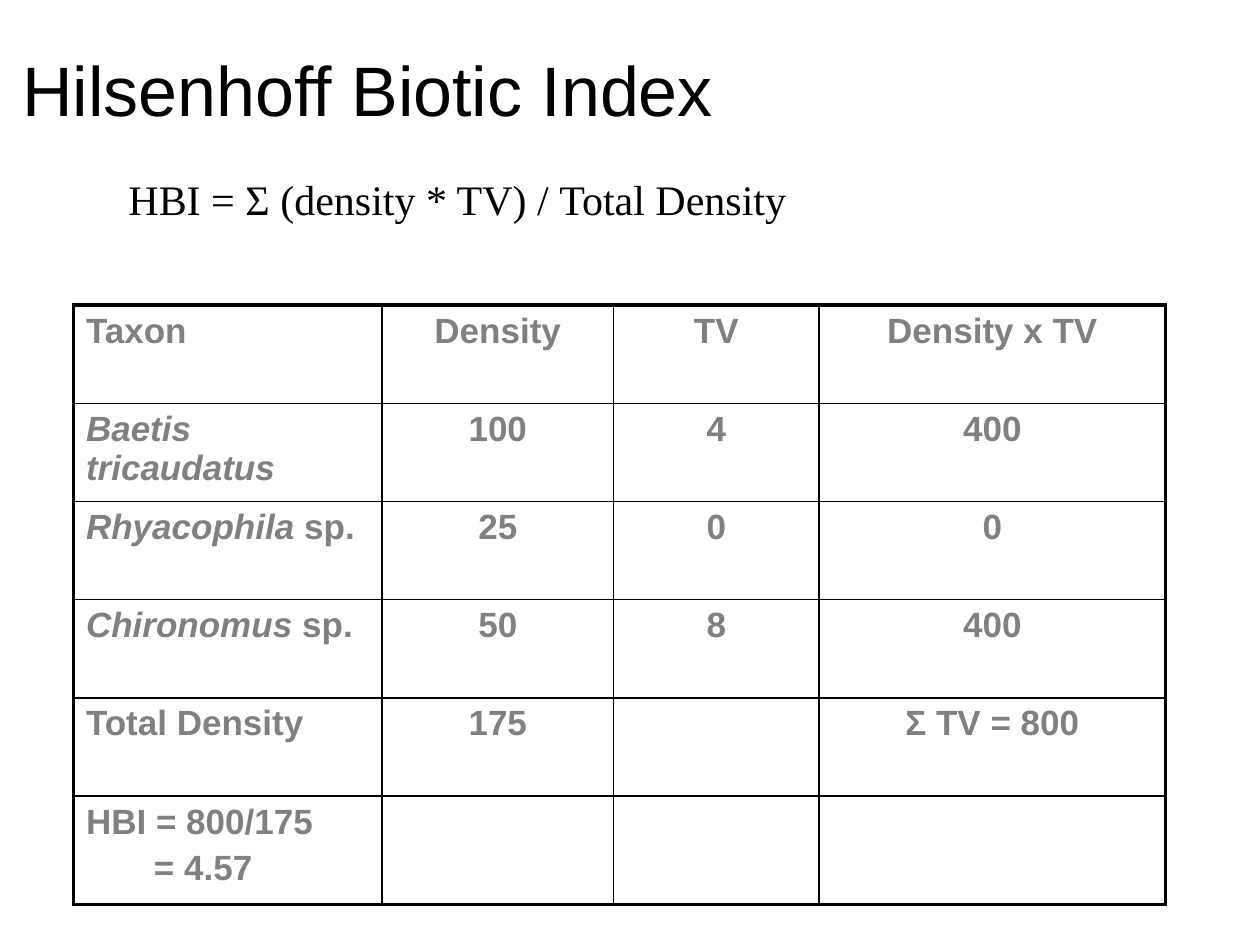
from lxml import etree
from pptx import Presentation
from pptx.dml.color import RGBColor
from pptx.enum.text import MSO_ANCHOR, PP_ALIGN
from pptx.oxml.ns import qn
from pptx.util import Cm, Pt

CENTER, LEFT = PP_ALIGN.CENTER, PP_ALIGN.LEFT
MIDDLE, TOP = MSO_ANCHOR.MIDDLE, MSO_ANCHOR.TOP
BLACK, GRAY = "000000", "808080"
THICK, THIN = 2.25, 1

TITLE = "Hilsenhoff Biotic Index"
FORMULA = "HBI = Σ (density * TV) / Total Density"

# A first cell is (italic species name, upright text); a line break starts a paragraph.
ROWS = [
    (("", "Taxon"), "Density", "TV", "Density x TV"),
    (("Baetis tricaudatus", ""), "100", "4", "400"),
    (("Rhyacophila", " sp."), "25", "0", "0"),
    (("Chironomus", " sp."), "50", "8", "400"),
    (("", "Total Density"), "175", "", "Σ TV = 800"),
    (("", "HBI = 800/175\n= 4.57"), "", "", ""),
]
COL_WIDTHS = [6.22, 4.67, 4.14, 6.99]
ROW_HEIGHTS = [1.98] * 5 + [2.18]
RESULT_INDENT = 1.37


def set_font(p, name, size, color, bold=False):
    p.font.name, p.font.size, p.font.bold = name, Pt(size), bold
    p.font.color.rgb = RGBColor.from_string(color)


def add_text(s, box, text, font, size, anchor, wrap):
    tf = s.shapes.add_textbox(*map(Cm, box)).text_frame
    tf.word_wrap, tf.vertical_anchor = wrap, anchor
    tf.text = text
    set_font(tf.paragraphs[0], font, size, BLACK)


def set_borders(cell, **widths):
    """Draw the sides L, R, T and B with the given widths in points."""
    tcPr = cell._tc.get_or_add_tcPr()
    for side, width in widths.items():
        ln = etree.SubElement(tcPr, qn("a:ln" + side), w=str(Pt(width)))
        fill = etree.SubElement(ln, qn("a:solidFill"))
        etree.SubElement(fill, qn("a:srgbClr"), val=BLACK)


def fill_cell(cell, italic, upright, align):
    tf = cell.text_frame
    lines = upright.split("\n")
    for i, line in enumerate(lines):
        p = tf.add_paragraph() if i else tf.paragraphs[0]
        if i:
            p.space_before = Pt(4)
            pPr = p._p.get_or_add_pPr()
            pPr.set("marL", str(Cm(RESULT_INDENT)))
        p.alignment = align
        set_font(p, "Arial", 20, GRAY, bold=True)
        if italic:
            r = p.add_run()
            r.text, r.font.italic = italic, True
        if line:
            p.add_run().text = line


def add_index_table(s, left, top):
    frame = s.shapes.add_table(len(ROWS), len(COL_WIDTHS), Cm(left), Cm(top),
                               Cm(sum(COL_WIDTHS)), Cm(sum(ROW_HEIGHTS)))
    table = frame.table
    table.first_row = table.horz_banding = False
    for col, width in zip(table.columns, COL_WIDTHS):
        col.width = Cm(width)
    for row, height in zip(table.rows, ROW_HEIGHTS):
        row.height = Cm(height)
    last_row, last_col = len(ROWS) - 1, len(COL_WIDTHS) - 1
    for i, (taxon, *values) in enumerate(ROWS):
        for j, (italic, upright) in enumerate([taxon] + [("", v) for v in values]):
            cell = table.cell(i, j)
            fill_cell(cell, italic, upright, CENTER if j else LEFT)
            set_borders(cell,
                        L=THIN if j else THICK,
                        R=THICK if j == last_col else THIN,
                        T=THIN if i else THICK,
                        B=THICK if i == last_row else THIN)
            cell.fill.background()


prs = Presentation()
prs.slide_width, prs.slide_height = Cm(25.4), Cm(19.05)
s = prs.slides.add_slide(prs.slide_layouts[6])
add_text(s, (0.2, 0.2, 21.6, 3.18), TITLE, "Arial", 40, MIDDLE, True)
add_text(s, (2.34, 3.38, 13.84, 1.27), FORMULA, "Times New Roman", 24, TOP, False)
add_index_table(s, 1.48, 6.15)
prs.save("out.pptx")
